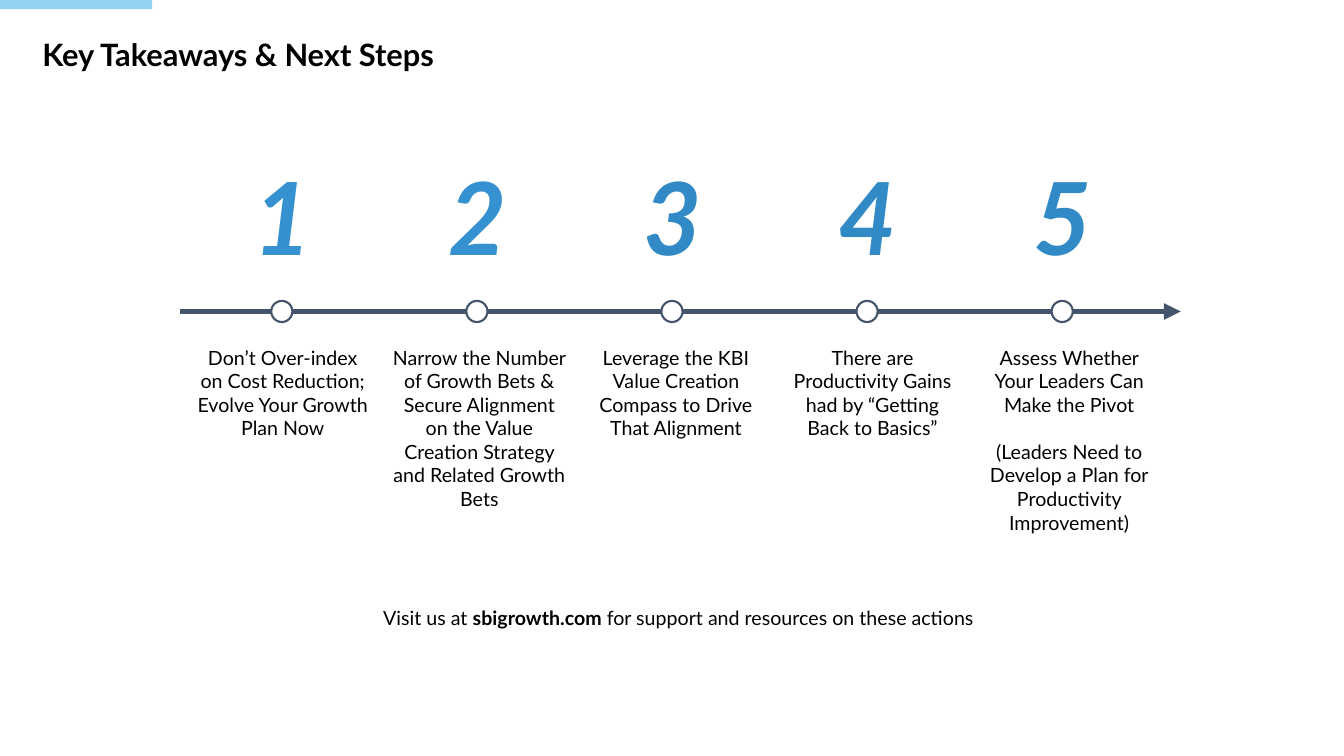
from lxml.etree import SubElement
from pptx import Presentation
from pptx.dml.color import RGBColor
from pptx.enum.shapes import MSO_CONNECTOR as Connector, MSO_SHAPE as Shape
from pptx.enum.text import MSO_ANCHOR as Anchor, PP_ALIGN as Align
from pptx.oxml.ns import qn
from pptx.util import Inches, Pt

BLACK = RGBColor(0x00, 0x00, 0x00)
WHITE = RGBColor(0xFF, 0xFF, 0xFF)
SLATE = RGBColor(0x44, 0x54, 0x6A)
SKY = RGBColor(0x95, 0xD3, 0xF3)
BLUE = RGBColor(0x35, 0x91, 0xCF)
DEEP_BLUE = RGBColor(0x31, 0x8A, 0xC6)

FONT = "Lato"
STEP_WIDTH = 1.73
STEP_HEIGHT = 1.36
STEP_PITCH = 1.935
CAPTION_PITCH = 1.95
MARKER_SIZE = 0.21

STEPS = [
    (BLUE, ["Don’t Over-index on Cost Reduction; Evolve Your Growth Plan Now"]),
    (BLUE, ["Narrow the Number of Growth Bets & Secure Alignment on the Value "
            "Creation Strategy and Related Growth Bets"]),
    (DEEP_BLUE, ["Leverage the KBI Value Creation Compass to Drive That Alignment"]),
    (DEEP_BLUE, ["There are Productivity Gains had by “Getting Back to Basics”"]),
    (DEEP_BLUE, ["Assess Whether Your Leaders Can Make the Pivot",
                 "(Leaders Need to Develop a Plan for Productivity Improvement)"]),
]


def add_text(slide, box, paragraphs, size=14, color=BLACK, align=Align.CENTER,
             bold=None, italic=None, insets=(0, 0), anchor=Anchor.TOP):
    """Add a text box whose paragraphs are lists of (text, bold) runs or strings."""
    frame = slide.shapes.add_textbox(*map(Inches, box)).text_frame
    frame.word_wrap = True
    frame.vertical_anchor = anchor
    frame.margin_left = frame.margin_right = Inches(insets[0])
    frame.margin_top = frame.margin_bottom = Inches(insets[1])
    for index, content in enumerate(paragraphs):
        paragraph = frame.paragraphs[0] if index == 0 else frame.add_paragraph()
        paragraph.alignment = align
        if index:
            paragraph.space_before = Pt(size * 1.2)
        font = paragraph.font
        font.name, font.size, font.bold, font.italic = FONT, Pt(size), bold, italic
        font.color.rgb = color
        for text, run_bold in [(content, None)] if isinstance(content, str) else content:
            run = paragraph.add_run()
            run.text = text
            run.font.bold = run_bold
    return frame


def add_plain_shape(slide, kind, box, fill):
    """Add a filled shape without outline or shadow."""
    shape = slide.shapes.add_shape(kind, *map(Inches, box))
    shape.shadow.inherit = False
    shape.fill.solid()
    shape.fill.fore_color.rgb = fill
    shape.line.fill.background()
    return shape


def add_header(slide, left, top, width, height):
    """Place the corner accent and the slide title."""
    add_plain_shape(slide, Shape.RECTANGLE, (0, 0, 1.51, 0.09), SKY)
    frame = add_text(slide, (left, top, width, height), ["Key Takeaways & Next Steps"],
                     size=22, align=Align.LEFT, bold=True, anchor=Anchor.BOTTOM)
    frame.paragraphs[0].line_spacing = 0.9


def add_axis(slide, left, middle, width):
    """Draw the horizontal timeline arrow."""
    axis = slide.shapes.add_connector(Connector.STRAIGHT, Inches(left), Inches(middle),
                                      Inches(left + width), Inches(middle))
    axis.line.color.rgb = SLATE
    axis.line.width = Pt(4)
    SubElement(axis.line._get_or_add_ln(), qn("a:tailEnd"), type="triangle")
    SubElement(axis._element.spPr, qn("a:effectLst"))


def add_timeline(slide, left, top, width):
    """Place the arrow with a number, a marker and a caption for each step."""
    middle = top + 1.6
    add_axis(slide, left, middle, width)
    for index, (color, caption) in enumerate(STEPS):
        step_left = left + 0.15 + index * STEP_PITCH
        caption_left = left + 0.15 + index * CAPTION_PITCH
        add_text(slide, (step_left, top, STEP_WIDTH, STEP_HEIGHT), [str(index + 1)],
                 size=72, color=color, bold=True, italic=True, insets=(0.1, 0.05))
        marker = add_plain_shape(
            slide, Shape.OVAL,
            (step_left + 0.75, middle - MARKER_SIZE / 2, MARKER_SIZE, MARKER_SIZE), WHITE)
        marker.line.color.rgb = SLATE
        marker.line.width = Pt(1.5)
        add_text(slide, (caption_left, top + 1.94, STEP_WIDTH, STEP_HEIGHT), caption)


def add_invitation(slide, left, top, width, height):
    """Place the closing line with the web address in bold."""
    add_text(slide, (left, top, width, height),
             [[("Visit us at ", None), ("sbigrowth.com ", True),
               ("for support and resources on these actions", None)]])


def main():
    """Build and save the slide."""
    presentation = Presentation()
    presentation.slide_width = Inches(13.33)
    presentation.slide_height = Inches(7.5)
    slide = presentation.slides.add_slide(presentation.slide_layouts[6])
    add_header(slide, 0.42, 0.34, 12, 0.39)
    add_timeline(slide, 1.79, 1.49, 9.92)
    add_invitation(slide, 2.82, 6.01, 7.82, 0.76)
    presentation.save("out.pptx")


if __name__ == "__main__":
    main()
